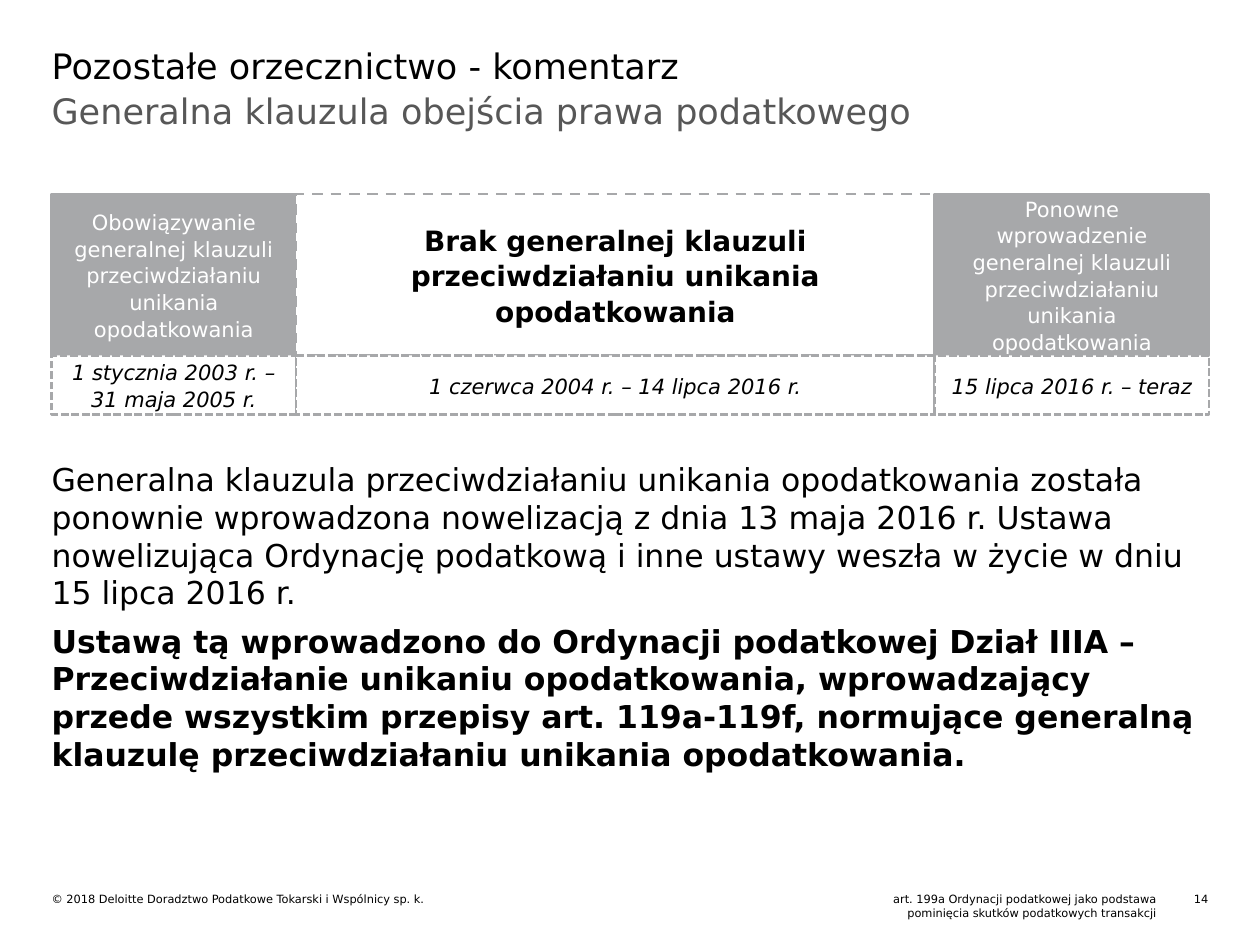
import pptx
import pptx.dml.color
import pptx.enum.dml
import pptx.enum.shapes
import pptx.enum.text
import pptx.oxml
import pptx.oxml.ns
import pptx.util

Pt = pptx.util.Pt
ALIGN = pptx.enum.text.PP_ALIGN
ANCHOR = pptx.enum.text.MSO_ANCHOR
DASH = pptx.enum.dml.MSO_LINE

LEFT, WIDTH = 29.5, 661.5
BLACK, WHITE, GREY, DARK_GREY = "000000", "FFFFFF", "A7A8AA", "575757"


def color(hex_value):
    return pptx.dml.color.RGBColor.from_string(hex_value)


def write(paragraph, text, size=12, ink=BLACK, bold=False, italic=False,
          align=ALIGN.LEFT, before=0, after=0, spacing=1.0):
    paragraph.text = text
    properties = paragraph._p.get_or_add_pPr()
    properties.set("marL", "0")
    properties.set("indent", "0")
    properties.append(pptx.oxml.parse_xml(
        f"<a:buNone {pptx.oxml.ns.nsdecls('a')}/>"))
    paragraph.alignment = align
    paragraph.space_before, paragraph.space_after = Pt(before), Pt(after)
    paragraph.line_spacing = spacing
    for run in paragraph.runs:
        font = run.font
        font.name, font.size = "DejaVu Sans", Pt(size)
        font.bold, font.italic = bold, italic
        font.color.rgb = color(ink)


class Deck:
    def __init__(self, width, height):
        self.presentation = pptx.Presentation()
        self.presentation.slide_width = Pt(width)
        self.presentation.slide_height = Pt(height)
        self.slide = self.presentation.slides.add_slide(
            self.presentation.slide_layouts[1])

    def frame(self, shape, margin=0, anchor=ANCHOR.TOP):
        frame = shape.text_frame
        frame.word_wrap = True
        frame.auto_size = pptx.enum.text.MSO_AUTO_SIZE.NONE
        frame.vertical_anchor = anchor
        frame.margin_left = frame.margin_right = Pt(margin)
        frame.margin_top = frame.margin_bottom = Pt(margin)
        return frame

    def placeholder(self, index, box, text, **style):
        holder = self.slide.placeholders[index]
        holder.left, holder.top, holder.width, holder.height = map(Pt, box)
        write(self.frame(holder).paragraphs[0], text, **style)

    def text(self, box, *paragraphs, **style):
        """Each paragraph is a pair: its text and its own format."""
        frame = self.frame(self.slide.shapes.add_textbox(*map(Pt, box)))
        for number, (text, own) in enumerate(paragraphs):
            paragraph = frame.add_paragraph() if number else frame.paragraphs[0]
            write(paragraph, text, **{**style, **own})

    def cell(self, box, text, fill, dash, **style):
        shape = self.slide.shapes.add_shape(
            pptx.enum.shapes.MSO_SHAPE.RECTANGLE, *map(Pt, box))
        shape.shadow.inherit = False
        shape.fill.solid()
        shape.fill.fore_color.rgb = color(fill)
        shape.line.color.rgb = color(GREY)
        shape.line.width = Pt(1.5)
        shape.line.dash_style = dash
        frame = self.frame(shape, margin=7.2, anchor=ANCHOR.MIDDLE)
        write(frame.paragraphs[0], text, align=ALIGN.CENTER, spacing=1.06, **style)


def main():
    deck = Deck(720, 540)
    deck.placeholder(0, (LEFT, 25.2, WIDTH, 54.7),
                     "Pozostałe orzecznictwo - komentarz", size=20)
    deck.placeholder(1, (LEFT, 51.1, WIDTH, 59.8),
                     "Generalna klauzula obejścia prawa podatkowego",
                     size=20, ink=DARK_GREY, after=10)

    in_force = dict(fill=GREY, dash=DASH.SOLID, ink=WHITE)
    no_clause = dict(fill=WHITE, dash=DASH.DASH, size=16, bold=True)
    dates = dict(fill=WHITE, dash=DASH.SQUARE_DOT, italic=True)
    periods = [
        (139.7, "Obowiązywanie generalnej klauzuli przeciwdziałaniu unikania "
         "opodatkowania", in_force, "1 stycznia 2003 r. – 31 maja 2005 r."),
        (365, "Brak generalnej klauzuli przeciwdziałaniu unikania opodatkowania",
         no_clause, "1 czerwca 2004 r. – 14 lipca 2016 r."),
        (156.8, "Ponowne wprowadzenie generalnej klauzuli przeciwdziałaniu "
         "unikania opodatkowania", in_force, "15 lipca 2016 r. – teraz"),
    ]
    top, status_height, date_height = 110.9, 92.2, 33.8
    lefts = [LEFT + sum(period[0] for period in periods[:number])
             for number in range(len(periods))]
    for left, (width, status, look, _) in zip(lefts, periods):
        deck.cell((left, top, width, status_height), status, **look)
    for left, (width, _, _, date) in zip(lefts, periods):
        deck.cell((left, top + status_height, width, date_height), date, **dates)

    deck.text(
        (LEFT, 262.8, WIDTH, 180.7),
        ("Generalna klauzula przeciwdziałaniu unikania opodatkowania została "
         "ponownie wprowadzona nowelizacją z dnia 13 maja 2016 r. Ustawa "
         "nowelizująca Ordynację podatkową i inne ustawy weszła w życie w dniu "
         "15 lipca 2016 r.", {}),
        ("Ustawą tą wprowadzono do Ordynacji podatkowej Dział IIIA – "
         "Przeciwdziałanie unikaniu opodatkowania, wprowadzający przede "
         "wszystkim przepisy art. 119a-119f, normujące generalną klauzulę "
         "przeciwdziałaniu unikania opodatkowania.", dict(bold=True, before=6)),
        size=18)

    footers = [
        (LEFT, 316, 8, "© 2018 Deloitte Doradztwo Podatkowe Tokarski i Wspólnicy "
         "sp. k.", ALIGN.LEFT),
        (374.4, 286.6, 16, "art. 199a Ordynacji podatkowej jako podstawa\v"
         "pominięcia skutków podatkowych transakcji", ALIGN.RIGHT),
        (672.5, 18, 8, "14", ALIGN.RIGHT),
    ]
    for left, width, height, text, align in footers:
        deck.text((left, 509.8, width, height), (text, {}), size=6.5, align=align)

    deck.presentation.save("out.pptx")


if __name__ == "__main__":
    main()
